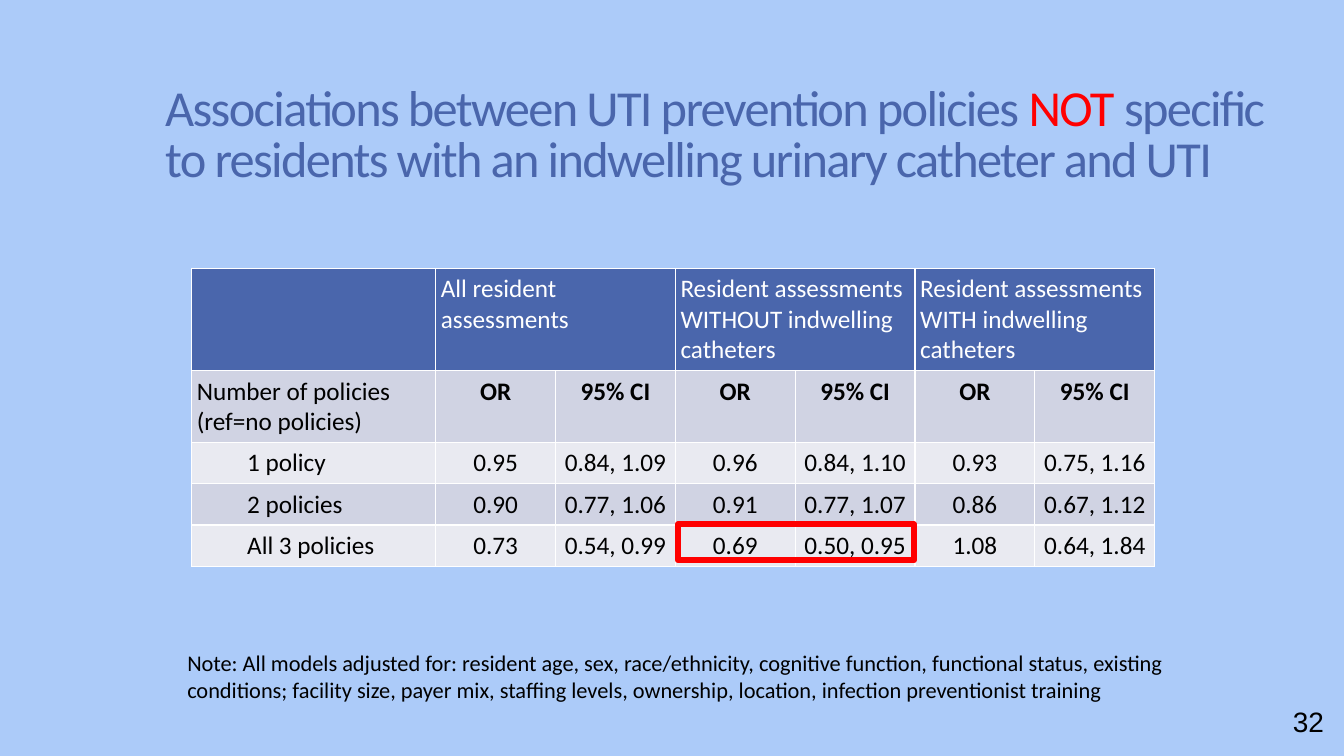
from lxml.etree import SubElement
from pptx import Presentation
from pptx.dml.color import RGBColor
from pptx.enum.shapes import MSO_SHAPE
from pptx.enum.text import MSO_ANCHOR, MSO_AUTO_SIZE, PP_ALIGN
from pptx.oxml.ns import qn
from pptx.util import Cm, Pt

COLORS = {
    "background": "ACCBF9",
    "blue": "4A66AC",
    "red": "FF0000",
    "white": "FFFFFF",
    "black": "000000",
    "dark band": "D0D3E3",
    "light band": "E9EAF1",
}
TITLE = [
    ("Associations between UTI prevention policies ", "blue"),
    ("NOT", "red"),
    (" specific to residents with an indwelling urinary catheter and UTI", "blue"),
]
GROUPS = [
    "All resident assessments",
    "Resident assessments WITHOUT indwelling catheters",
    "Resident assessments WITH indwelling catheters",
]
MEASURES = ["OR", "95% CI"]
ROW_HEADING = "Number of policies (ref=no policies)"
RESULTS = [
    ("1 policy", "0.95", "0.84, 1.09", "0.96", "0.84, 1.10", "0.93", "0.75, 1.16"),
    ("2 policies", "0.90", "0.77, 1.06", "0.91", "0.77, 1.07", "0.86", "0.67, 1.12"),
    ("All 3 policies", "0.73", "0.54, 0.99", "0.69", "0.50, 0.95", "1.08", "0.64, 1.84"),
]
NOTE = (
    "Note: All models adjusted for: resident age, sex, race/ethnicity, cognitive function, "
    "functional status, existing conditions; facility size, payer mix, staffing levels, "
    "ownership, location, infection preventionist training"
)
SLIDE_NUMBER = "32"

TABLE_LEFT, TABLE_TOP = 4.83, 6.76
LABEL_WIDTH, VALUE_WIDTH = 6.15, 3.02
ROW_HEIGHTS = [2.58, 1.81] + [1.03] * len(RESULTS)


def color(name):
    return RGBColor.from_string(COLORS[name])


def format_font(font, size, color_name, bold=False, name="Calibri"):
    font.name = name
    font.size = Pt(size)
    font.bold = bold
    font.color.rgb = color(color_name)


def add_borders(cell):
    properties = cell._tc.get_or_add_tcPr()
    for side in ("lnL", "lnR", "lnT", "lnB"):
        line = SubElement(properties, qn(f"a:{side}"), w=str(Pt(1)))
        fill = SubElement(line, qn("a:solidFill"))
        SubElement(fill, qn("a:srgbClr"), val=COLORS["white"])


def format_cell(cell, row, column):
    add_borders(cell)
    cell.fill.solid()
    band = "blue" if row == 0 else "dark band" if row % 2 else "light band"
    cell.fill.fore_color.rgb = color(band)
    cell.margin_left = cell.margin_right = Cm(0.13)
    cell.margin_top = cell.margin_bottom = Cm(0.13)
    paragraph = cell.text_frame.paragraphs[0]
    if row > 0 and column > 0:
        paragraph.alignment = PP_ALIGN.CENTER
    if row > 1:
        if column == 0:
            paragraph.level = 1
            paragraph._p.get_or_add_pPr().set("marL", str(Cm(1.27)))
        else:
            cell.vertical_anchor = MSO_ANCHOR.MIDDLE
    format_font(paragraph.font, 18, "white" if row == 0 else "black")
    for run in paragraph.runs:
        format_font(run.font, 18, "white" if row == 0 else "black",
                    bold=row == 1 and column > 0)


def add_title(slide):
    title = slide.shapes.title
    title.left, title.top, title.width, title.height = Cm(3.91), Cm(1.6), Cm(28.35), Cm(3.68)
    frame = title.text_frame
    frame.word_wrap = True
    frame.auto_size = MSO_AUTO_SIZE.NONE
    frame.vertical_anchor = MSO_ANCHOR.MIDDLE
    paragraph = frame.paragraphs[0]
    paragraph.alignment = PP_ALIGN.LEFT
    paragraph.line_spacing = 0.85
    for text, color_name in TITLE:
        run = paragraph.add_run()
        run.text = text
        format_font(run.font, 36, color_name)
        run._r.get_or_add_rPr().set("spc", "-120")


def add_results_table(slide):
    group_cells = [text for group in GROUPS for text in (group, "")]
    rows = [["", *group_cells], [ROW_HEADING, *MEASURES * len(GROUPS)], *RESULTS]
    widths = [LABEL_WIDTH] + [VALUE_WIDTH] * len(group_cells)
    table = slide.shapes.add_table(
        len(rows), len(widths), Cm(TABLE_LEFT), Cm(TABLE_TOP),
        Cm(sum(widths)), Cm(sum(ROW_HEIGHTS))).table
    for column, width in zip(table.columns, widths):
        column.width = Cm(width)
    for row, height in zip(table.rows, ROW_HEIGHTS):
        row.height = Cm(height)
    for row, texts in enumerate(rows):
        for column, text in enumerate(texts):
            cell = table.cell(row, column)
            cell.text_frame.text = text
            format_cell(cell, row, column)
    for column in range(1, len(widths), 2):
        table.cell(0, column).merge(table.cell(0, column + 1))


def add_highlight(slide):
    """Frame the last row's values for residents without catheters."""
    left = TABLE_LEFT + LABEL_WIDTH + 2 * VALUE_WIDTH
    top = TABLE_TOP + sum(ROW_HEIGHTS[:-1])
    frame = slide.shapes.add_shape(
        MSO_SHAPE.RECTANGLE, Cm(left + 0.07), Cm(top), Cm(2 * VALUE_WIDTH - 0.1), Cm(0.91))
    frame.shadow.inherit = False
    frame.fill.background()
    frame.line.color.rgb = color("red")
    frame.line.width = Pt(4.5)


def add_text(slide, text, left, top, width, height, size, font_name, wrap):
    frame = slide.shapes.add_textbox(Cm(left), Cm(top), Cm(width), Cm(height)).text_frame
    frame.text = text
    frame.word_wrap = wrap
    frame.auto_size = MSO_AUTO_SIZE.SHAPE_TO_FIT_TEXT
    format_font(frame.paragraphs[0].runs[0].font, size, "black", name=font_name)


def main():
    presentation = Presentation()
    presentation.slide_width, presentation.slide_height = Cm(33.87), Cm(19.05)
    slide = presentation.slides.add_slide(presentation.slide_layouts[5])
    slide.background.fill.solid()
    slide.background.fill.fore_color.rgb = color("background")
    add_title(slide)
    add_results_table(slide)
    add_text(slide, NOTE, 4.47, 16.23, 25.73, 1.63, 16, "Calibri", True)
    add_highlight(slide)
    add_text(slide, SLIDE_NUMBER, 32.33, 17.63, 1.3, 1.12, 20, "Arial", False)
    presentation.save("out.pptx")


if __name__ == "__main__":
    main()
